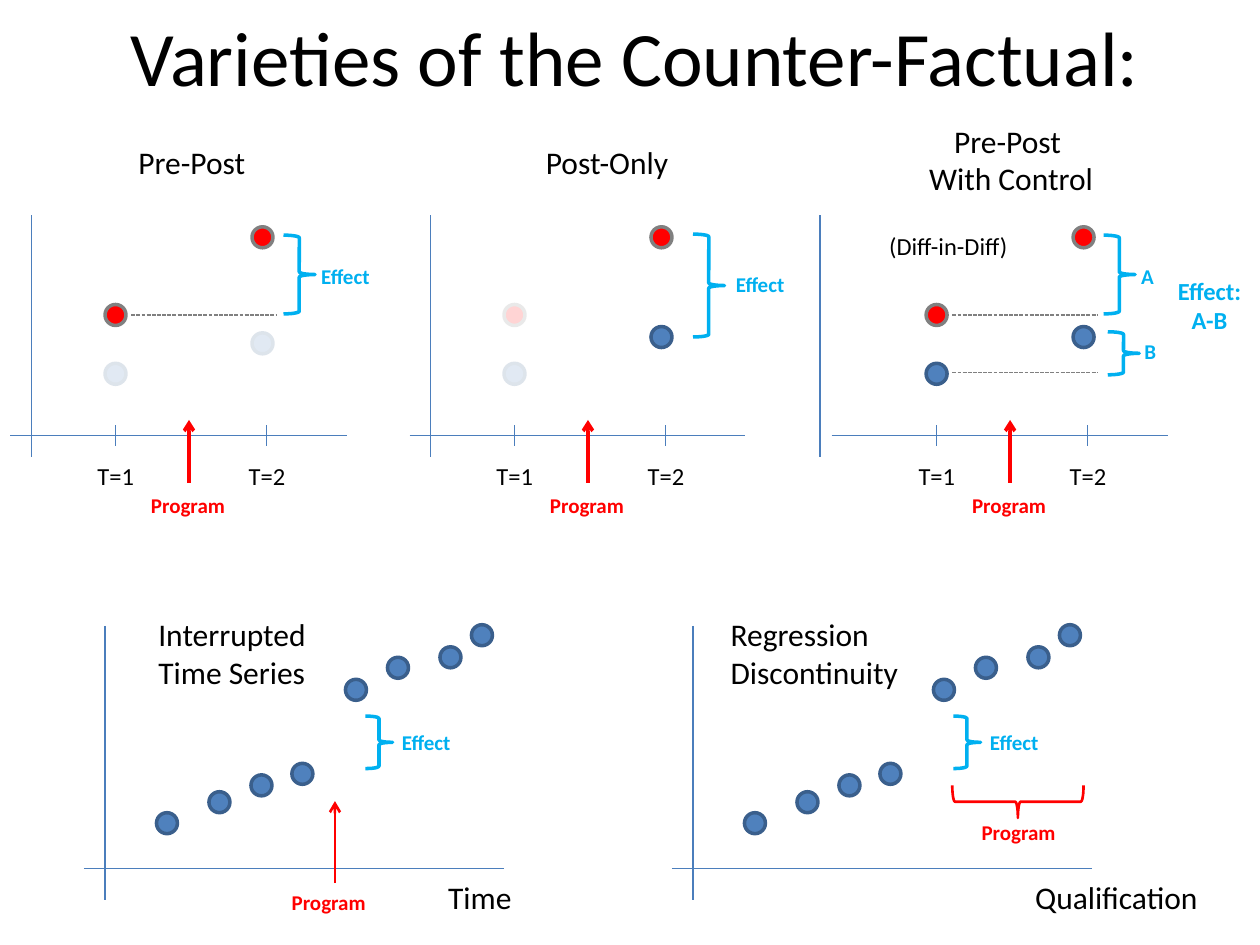
"""Build a slide that sketches five research designs and their counter-factuals."""
from lxml.etree import SubElement
from pptx import Presentation
from pptx.dml.color import RGBColor
from pptx.enum.dml import MSO_LINE_DASH_STYLE as DASH
from pptx.enum.shapes import MSO_CONNECTOR, MSO_SHAPE as SHAPE
from pptx.enum.text import MSO_ANCHOR, PP_ALIGN as ALIGN
from pptx.oxml.ns import qn
from pptx.util import Inches, Pt

BLACK = RGBColor(0x00, 0x00, 0x00)
WHITE = RGBColor(0xFF, 0xFF, 0xFF)
GREY = RGBColor(0x80, 0x80, 0x80)
RED = RGBColor(0xFF, 0x00, 0x00)
CYAN = RGBColor(0x00, 0xB0, 0xF0)
BLUE = RGBColor(0x4F, 0x81, 0xBD)
NAVY = RGBColor(0x3A, 0x5F, 0x8C)
AXIS = RGBColor(0x4B, 0x7E, 0xBC)
FONT = "Calibri"
DOT = 2

prs = Presentation()
prs.slide_width, prs.slide_height = Inches(10), Inches(7.5)
CELL = prs.slide_width / 120
slide = prs.slides.add_slide(prs.slide_layouts[5])


def add_line(x1, y1, x2, y2, color=AXIS, width=0.75, dash=None, arrow=False):
    ends = [round(v * CELL) for v in (x1, y1, x2, y2)]
    line = slide.shapes.add_connector(MSO_CONNECTOR.STRAIGHT, *ends)
    line.line.color.rgb = color
    line.line.width = Pt(width)
    if dash:
        line.line.dash_style = dash
    if arrow:
        SubElement(line.line._get_or_add_ln(), qn("a:tailEnd"), type="arrow")
    SubElement(line._element.spPr, qn("a:effectLst"))


def add_figure(preset, box, fill=None, outline=None, width=2):
    figure = slide.shapes.add_shape(preset, *[round(v * CELL) for v in box])
    figure.shadow.inherit = False
    if fill is None:
        figure.fill.background()
    else:
        figure.fill.solid()
        figure.fill.fore_color.rgb = fill
    if outline is None:
        figure.line.fill.background()
    else:
        figure.line.color.rgb = outline
        figure.line.width = Pt(width)
    return figure


title = slide.shapes.title
title.left, title.top, title.width, title.height = [
    round(v * CELL) for v in (6.5, -2.2, 108, 15)]
title.text_frame.vertical_anchor = MSO_ANCHOR.MIDDLE
heading = title.text_frame.paragraphs[0]
heading.alignment = ALIGN.CENTER
heading_run = heading.add_run()
heading_run.text = "Varieties of the Counter-Factual:"
heading_run.font.name, heading_run.font.size = FONT, Pt(44)
heading_run.font.color.rgb = BLACK

labels = [
    ("Pre-Post", 12, 13, 12.7, 18, BLACK),
    ("Post-Only", 50.8, 13, 14.3, 18, BLACK),
    ("Pre-Post \nWith Control", 87.2, 11, 18.2, 18, BLACK),
    ("(Diff-in-Diff)", 83.5, 21.4, 13.9, 14, BLACK),
    ("Effect", 29.4, 24.5, 7.1, 12, CYAN),
    ("Effect", 68.9, 25.3, 7.1, 12, CYAN),
    ("A", 107.5, 24.5, 3.6, 12, CYAN),
    ("B", 107.8, 31.7, 3.6, 12, CYAN),
    ("Effect:\nA-B", 110.9, 25.7, 8.6, 14, CYAN),
    ("Interrupted\nTime Series", 13.9, 58, 16.7, 18, BLACK),
    ("Regression \nDiscontinuity", 68.4, 58, 18.6, 18, BLACK),
    ("Time", 41.5, 83, 8.5, 18, BLACK),
    ("Qualification", 97.4, 83, 18.1, 18, BLACK),
    ("Program", 26.6, 84.1, 9.6, 12, RED),
    ("Program", 92.3, 77.5, 9.6, 12, RED),
]

for left, axis_x, post_y in ((0, 3, 31.7), (38, 41, 31.1), (78.2, 78.1, 31.1)):
    add_line(axis_x, 20.5, axis_x, 43.5)
    add_line(left + 1, 41.5, left + 33, 41.5)
    for x, y, fill, outline in ((10, 34.6, BLUE, NAVY), (24, post_y, BLUE, NAVY),
                                (10, 29, RED, GREY), (24, 21.6, RED, GREY)):
        add_figure(SHAPE.OVAL, (left + x, y, DOT, DOT), fill, outline)
    for x, moment in ((11, "T=1"), (25.4, "T=2")):
        add_line(left + x, 40.5, left + x, 42.5)
        labels.append((moment, left + x - 2.9, 43.3, 6, 14, BLACK))
    add_line(left + 18, 46, left + 18, 40, RED, 2, arrow=True)
    labels.append(("Program", left + 13.2, 46.3, 9.6, 12, RED))

for x, y in ((12.5, 30), (90.7, 30), (90.7, 35.5)):
    add_line(x, y, x + 13.8, y, GREY, dash=DASH.SQUARE_DOT)

for box in ((8.2, 31.4, 22.6, 8), (46.1, 27.6, 6, 10.4)):
    veil = add_figure(SHAPE.RECTANGLE, box, WHITE)
    tint = veil._element.spPr.find(qn("a:solidFill"))[0]
    SubElement(tint, qn("a:alpha"), val="83000")

SERIES = ((14.9, 77.4), (19.9, 75.4), (23.9, 73.8), (27.8, 72.7),
          (32.9, 64.7), (36.9, 62.6), (41.9, 61.6), (44.9, 59.5))
for left in (0, 56):
    add_line(left + 10, 59.6, left + 10, 85.7)
    add_line(left + 8, 82.7, left + 48, 82.7)
    for x, y in SERIES:
        add_figure(SHAPE.OVAL, (left + x, y, DOT, DOT), BLUE, NAVY)
    add_figure(SHAPE.RIGHT_BRACE, (left + 34.8, 68.2, 2.6, 5), outline=CYAN)
    labels.append(("Effect", left + 37.1, 68.9, 7.1, 12, CYAN))
add_line(31.9, 84.1, 31.9, 76.3, RED, 1.5, arrow=True)

for box in ((27, 22.4, 3, 7.5), (66, 22.3, 3, 9.8),
            (105.1, 22.4, 3, 7.5), (105.5, 31.6, 3, 4.1)):
    add_figure(SHAPE.RIGHT_BRACE, box, outline=CYAN)
treated = add_figure(SHAPE.LEFT_BRACE, (95.4, 70.1, 3.1, 12.5), outline=RED, width=1.5)
treated.rotation = 270

for words, x, y, width, size, color in labels:
    lines = words.split("\n")
    height = len(lines) * size * 0.2 + 1.2
    label = slide.shapes.add_textbox(*[round(v * CELL) for v in (x, y, width, height)])
    label.text_frame.word_wrap = False
    paragraph = label.text_frame.paragraphs[0]
    if "Control" in words or "A-B" in words:
        paragraph.alignment = ALIGN.CENTER
    for number, line in enumerate(lines):
        if number:
            paragraph.add_line_break()
        run = paragraph.add_run()
        run.text = line
        run.font.name, run.font.size = FONT, Pt(size)
        run.font.bold = color != BLACK
        run.font.color.rgb = color

prs.save("out.pptx")
